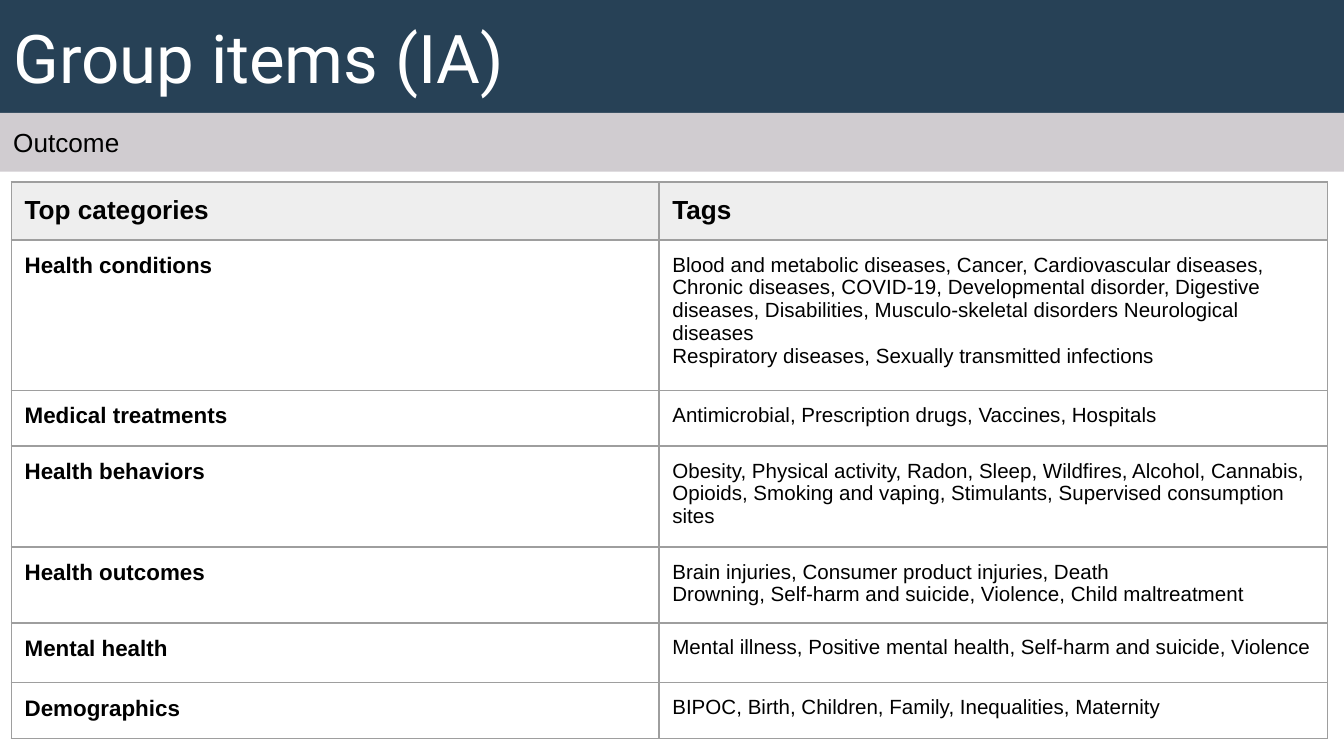
import pptx
import pptx.dml.color
import pptx.enum.shapes
import pptx.enum.text
import pptx.oxml
import pptx.oxml.ns
import pptx.util

Pt = pptx.util.Pt
ANCHOR = pptx.enum.text.MSO_ANCHOR
COLORS = {
    "navy": "274156",
    "mauve": "D0CCD0",
    "header": "EEEEEE",
    "border": "9E9E9E",
    "black": "000000",
    "white": "FFFFFF",
}
SLIDE_WIDTH, SLIDE_HEIGHT = 720, 405
TITLE_HEIGHT, SUBTITLE_HEIGHT = 60.5, 31.5
INSET = 7.2

HEADINGS = ("Top categories", "Tags")
CATEGORIES = [
    ("Health conditions",
     "Blood and metabolic diseases, Cancer, Cardiovascular diseases, "
     "Chronic diseases, COVID-19, Developmental disorder, Digestive diseases, "
     "Disabilities, Musculo-skeletal disorders Neurological diseases\n"
     "Respiratory diseases, Sexually transmitted infections"),
    ("Medical treatments", "Antimicrobial, Prescription drugs, Vaccines, Hospitals"),
    ("Health behaviors",
     "Obesity, Physical activity, Radon, Sleep, Wildfires, Alcohol, Cannabis, "
     "Opioids, Smoking and vaping, Stimulants, Supervised consumption sites"),
    ("Health outcomes",
     "Brain injuries, Consumer product injuries, Death\n"
     "Drowning, Self-harm and suicide, Violence, Child maltreatment"),
    ("Mental health",
     "Mental illness, Positive mental health, Self-harm and suicide, Violence"),
    ("Demographics", "BIPOC, Birth, Children, Family, Inequalities, Maternity"),
]
COLUMN_WIDTHS = (347, 358)
ROW_HEIGHTS = (31.1, 80.4, 30, 54.1, 40.7, 32.1, 30)


def rgb(name):
    return pptx.dml.color.RGBColor.from_string(COLORS[name])


def set_all(target, values):
    for key, value in values.items():
        setattr(target, key, value)


def write(frame, text, size, color="black", font="Arial", bold=False):
    frame.text = text
    for paragraph in frame.paragraphs:
        paragraph.alignment = pptx.enum.text.PP_ALIGN.LEFT
        for run in paragraph.runs:
            set_all(run.font, {"name": font, "size": Pt(size), "bold": bold})
            run.font.color.rgb = rgb(color)


def format_band(band, top, height, fill, anchor):
    """Lay a full-width filled band across the slide."""
    set_all(band, {"left": Pt(0), "top": Pt(top),
                   "width": Pt(SLIDE_WIDTH), "height": Pt(height)})
    band.fill.solid()
    band.fill.fore_color.rgb = rgb(fill)
    band.line.fill.background()
    margins = {f"margin_{side}": Pt(INSET) for side in ("left", "top", "right", "bottom")}
    set_all(band.text_frame, {
        **margins, "word_wrap": True, "vertical_anchor": anchor,
        "auto_size": pptx.enum.text.MSO_AUTO_SIZE.NONE})


def add_borders(cell):
    properties = cell._tc.get_or_add_tcPr()
    for side in "LRTB":
        properties.append(pptx.oxml.parse_xml(
            f'<a:ln{side} {pptx.oxml.ns.nsdecls("a")} w="{Pt(0.75)}"><a:solidFill>'
            f'<a:srgbClr val="{COLORS["border"]}"/></a:solidFill></a:ln{side}>'))


def fill_cell(cell, text, size, bold, fill=None):
    set_all(cell, {f"margin_{side}": Pt(INSET)
                   for side in ("left", "top", "right", "bottom")})
    cell.vertical_anchor = ANCHOR.TOP
    write(cell.text_frame, text, size, bold=bold)
    add_borders(cell)
    if fill:
        cell.fill.solid()
        cell.fill.fore_color.rgb = rgb(fill)
    else:
        cell.fill.background()


def add_category_table(slide):
    rows = [HEADINGS, *CATEGORIES]
    categories = slide.shapes.add_table(
        len(rows), len(HEADINGS), Pt(6), Pt(97.5),
        Pt(sum(COLUMN_WIDTHS)), Pt(sum(ROW_HEIGHTS))).table
    set_all(categories, {"first_row": False, "horz_banding": False})
    for column, width in zip(categories.columns, COLUMN_WIDTHS):
        column.width = Pt(width)
    for row, height in zip(categories.rows, ROW_HEIGHTS):
        row.height = Pt(height)

    for heading, cell in zip(HEADINGS, categories.rows[0].cells):
        fill_cell(cell, heading, 14, True, "header")
    for index, (category, tags) in enumerate(CATEGORIES, start=1):
        fill_cell(categories.cell(index, 0), category, 12, True)
        fill_cell(categories.cell(index, 1), tags, 11, False)


def main():
    deck = pptx.Presentation()
    set_all(deck, {"slide_width": Pt(SLIDE_WIDTH), "slide_height": Pt(SLIDE_HEIGHT)})
    slide = deck.slides.add_slide(deck.slide_layouts[5])

    # Title band
    title = slide.shapes.title
    format_band(title, 0, TITLE_HEIGHT, "navy", ANCHOR.MIDDLE)
    write(title.text_frame, "Group items (IA)", 36, "white", "Roboto")

    # Subtitle band
    outcome = slide.shapes.add_shape(
        pptx.enum.shapes.MSO_SHAPE.RECTANGLE, Pt(0), Pt(TITLE_HEIGHT),
        Pt(SLIDE_WIDTH), Pt(SUBTITLE_HEIGHT))
    outcome.shadow.inherit = False
    format_band(outcome, TITLE_HEIGHT, SUBTITLE_HEIGHT, "mauve", ANCHOR.TOP)
    write(outcome.text_frame, "Outcome", 14)

    # Categories and their tags
    add_category_table(slide)
    deck.save("out.pptx")


if __name__ == "__main__":
    main()
